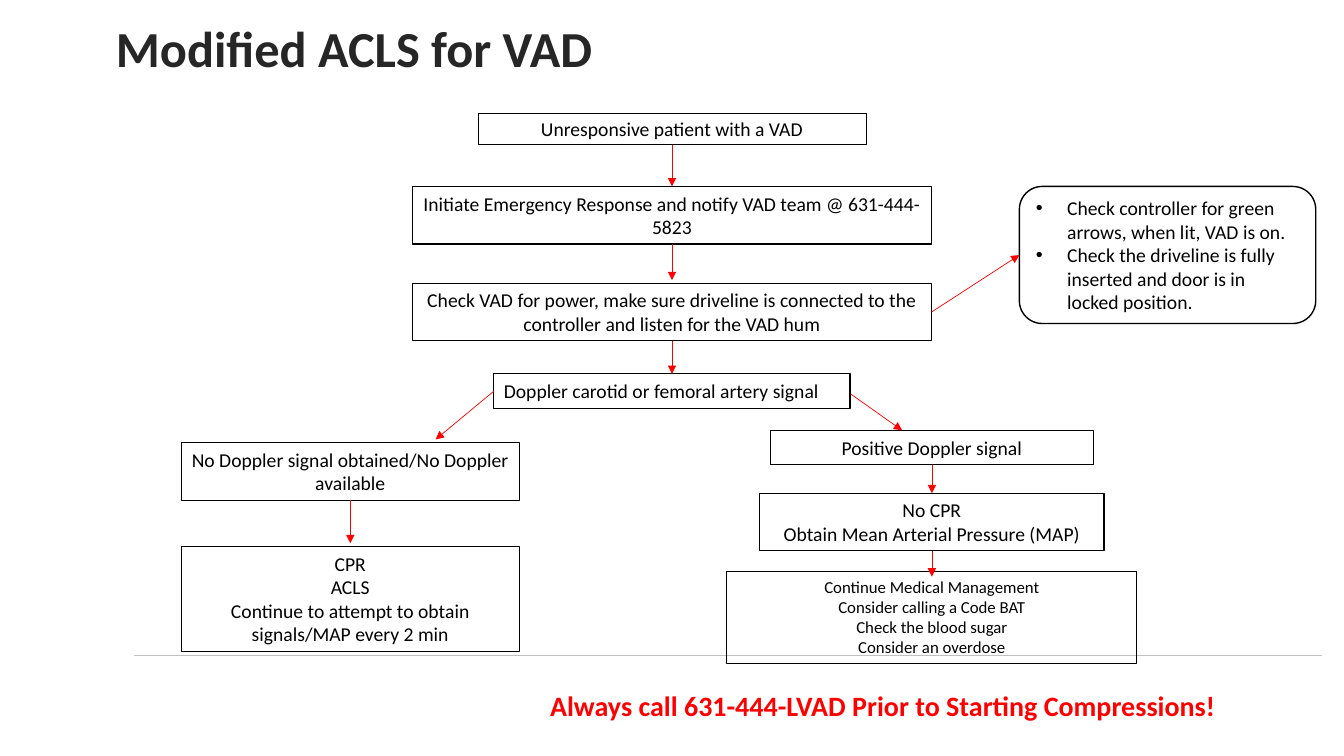
from lxml.etree import SubElement
from pptx import Presentation
from pptx.dml.color import RGBColor
from pptx.enum.shapes import MSO_CONNECTOR as Link, MSO_SHAPE as Form
from pptx.enum.text import MSO_ANCHOR as Anchor, PP_ALIGN as Align
from pptx.oxml.ns import qn
from pptx.util import Inches, Pt

COLORS = {"ink": "000000", "title": "262626", "alert": "FF0000", "rule": "C0C0C0", "paper": "FFFFFF"}
TOP, LEFT, BOTTOM, RIGHT = range(4)


class FlowSlide:
    """A slide laid out on a grid of 80 columns by 45 rows."""

    font = "Calibri"
    columns, rows = 80, 45

    def __init__(self, deck):
        self.slide = deck.slides.add_slide(deck.slide_layouts[6])
        self.column = deck.slide_width / self.columns
        self.row = deck.slide_height / self.rows

    def color(self, name):
        return RGBColor.from_string(COLORS[name])

    def place(self, x, y):
        return round(x * self.column), round(y * self.row)

    def set_text(self, frame, lines, size, color="ink", bold=False, align=Align.CENTER,
                 anchor=Anchor.TOP, bullets=False):
        frame.word_wrap = True
        frame.vertical_anchor = anchor
        frame.text = "\n".join(lines)
        for paragraph in frame.paragraphs:
            paragraph.alignment = align
            if bullets:
                properties = paragraph._p.get_or_add_pPr()
                properties.set("marL", str(Inches(0.31)))
                properties.set("indent", str(-Inches(0.31)))
                SubElement(properties, qn("a:buFont"), typeface="Arial")
                SubElement(properties, qn("a:buChar"), char="•")
            font = paragraph.font
            font.name, font.size, font.bold = self.font, Pt(size), bold
            font.color.rgb = self.color(color)

    def text(self, left, top, width, height, line, size, **style):
        area = self.slide.shapes.add_textbox(*self.place(left, top), *self.place(width, height))
        self.set_text(area.text_frame, [line], size, **style)
        return area.text_frame

    def step(self, center, top, width, height, *lines, size=14, form=Form.RECTANGLE,
             weight=0.75, filled=False, **style):
        step = self.slide.shapes.add_shape(
            form, *self.place(center - width / 2, top), *self.place(width, height))
        step.shadow.inherit = False
        if filled:
            step.fill.solid()
            step.fill.fore_color.rgb = self.color("paper")
        else:
            step.fill.background()
        step.line.color.rgb = self.color("ink")
        step.line.width = Pt(weight)
        self.set_text(step.text_frame, lines, size, **style)
        return step

    def line(self, start, end, color, weight):
        line = self.slide.shapes.add_connector(
            Link.STRAIGHT, *self.place(*start), *self.place(*end))
        line.line.color.rgb = self.color(color)
        line.line.width = Pt(weight)
        SubElement(line._element.spPr, qn("a:effectLst"))
        return line

    def arrow(self, origin, target, leave=BOTTOM, enter=TOP):
        points = [end if isinstance(end, tuple) else (0, 0) for end in (origin, target)]
        arrow = self.line(*points, "alert", 0.5)
        if not isinstance(origin, tuple):
            arrow.begin_connect(origin, leave)
        if not isinstance(target, tuple):
            arrow.end_connect(target, enter)
        SubElement(arrow._element.spPr.find(qn("a:ln")), qn("a:tailEnd"), type="triangle")


def main():
    deck = Presentation()
    deck.slide_width, deck.slide_height = Inches(13.33), Inches(7.5)
    flow = FlowSlide(deck)
    main_axis, no_signal_axis, signal_axis = 40, 20.85, 55.47

    flow.line((8, 39), (78.7, 39), "rule", 1)
    title = flow.text(6.9, 1.08, 34.5, 4.74, "Modified ACLS for VAD", 36,
                      color="title", bold=True, align=Align.LEFT)
    title.margin_left = title.margin_top = title.margin_right = title.margin_bottom = 0
    title.paragraphs[0].line_spacing = Pt(42.7)
    flow.text(25.8, 40.44, 53.5, 3.06, "Always call 631-444-LVAD Prior to Starting Compressions!",
              20, color="alert", bold=True, anchor=Anchor.MIDDLE)

    patient = flow.step(main_axis, 6.74, 23.1, 1.88, "Unresponsive patient with a VAD",
                        weight=0.5, anchor=Anchor.MIDDLE)
    response = flow.step(main_axis, 11.1, 30.9, 3.43,
                         "Initiate Emergency Response and notify VAD team @ 631-444-5823",
                         weight=1, filled=True)
    power = flow.step(main_axis, 16.86, 30.9, 3.43,
                      "Check VAD for power, make sure driveline is connected to the "
                      "controller and listen for the VAD hum")
    doppler = flow.step(main_axis, 22.26, 21.2, 2.04,
                        "Doppler carotid or femoral artery signal", align=Align.LEFT)
    no_signal = flow.step(no_signal_axis, 26.35, 20.1, 3.43,
                          "No Doppler signal obtained/No Doppler available")
    flow.step(no_signal_axis, 32.53, 20.1, 6.24, "CPR", "ACLS",
              "Continue to attempt to obtain signals/MAP every 2 min")
    signal = flow.step(signal_axis, 25.63, 19.2, 2.04, "Positive Doppler signal")
    pressure = flow.step(signal_axis, 29.36, 20.5, 3.43, "No CPR",
                         "Obtain Mean Arterial Pressure (MAP)")
    flow.step(signal_axis, 34.02, 24.4, 5.46, "Continue Medical Management",
              "Consider calling a Code BAT", "Check the blood sugar", "Consider an overdose", size=12)
    controller = flow.step(69.5, 11.1, 17.64, 8.16,
                           "Check controller for green arrows, when lit, VAD is on.",
                           "Check the driveline is fully inserted and door is in locked position.",
                           form=Form.ROUNDED_RECTANGLE, weight=1, filled=True,
                           align=Align.LEFT, anchor=Anchor.MIDDLE, bullets=True)

    flow.arrow(patient, response)
    flow.arrow(response, (main_axis, 16.68))
    flow.arrow(power, doppler)
    flow.arrow(power, controller, RIGHT, LEFT)
    flow.arrow(doppler, (25.93, 26.16), LEFT)
    flow.arrow((50.65, 23.46), (53.7, 25.62))
    flow.arrow(no_signal, (no_signal_axis, 32.34))
    flow.arrow(signal, pressure)
    flow.arrow(pressure, (signal_axis, 34.32))
    deck.save("out.pptx")


if __name__ == "__main__":
    main()
